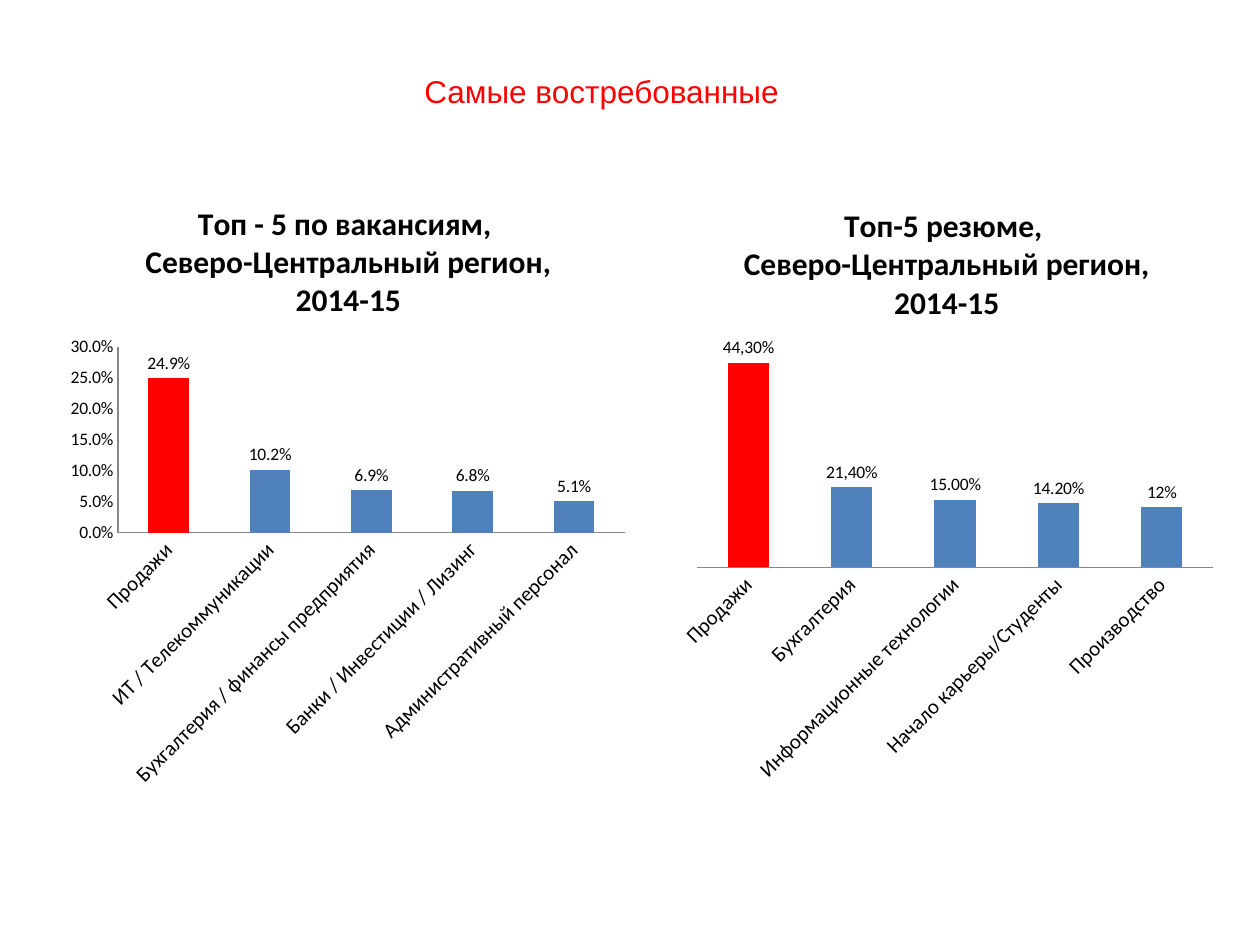
from lxml.etree import SubElement
from pptx import Presentation
from pptx.chart.data import CategoryChartData
from pptx.dml.color import RGBColor
from pptx.enum.chart import XL_CHART_TYPE, XL_LABEL_POSITION, XL_TICK_MARK
from pptx.enum.text import MSO_AUTO_SIZE
from pptx.oxml.ns import qn
from pptx.util import Inches, Pt

THEME = {
    "heading": {"name": "Arial", "size": Pt(18), "color": "FF0000"},
    "chart": {"name": "Calibri", "size": Pt(10), "color": "000000"},
    "chart_title": {"name": "Calibri", "size": Pt(18), "bold": True, "color": "000000"},
    "category": {"name": "Calibri", "size": Pt(12), "color": "000000"},
    "bar": "4F81BD",
    "leader": "FF0000",
    "axis": "868686",
}

# Frames are shares of the slide, plots are shares of their chart: left, top, width, height.
CHARTS = [
    {
        "frame": (0.048, 0.19, 0.457, 0.656),
        "plot": (0.10, 0.27, 0.88, 0.30),
        "title": "Топ - 5 по вакансиям, \nСеверо-Центральный регион, 2014-15",
        "values": {
            "Продажи": 0.249,
            "ИТ / Телекоммуникации": 0.102,
            "Бухгалтерия / финансы предприятия": 0.069,
            "Банки / Инвестиции / Лизинг": 0.068,
            "Административный персонал": 0.051,
        },
        "number_format": "0.0%",
        "maximum": 0.3,
        "show_scale": True,
        "own_labels": {},
    },
    {
        "frame": (0.531, 0.193, 0.441, 0.647),
        "plot": (0.05, 0.26, 0.93, 0.37),
        "title": "Топ-5 резюме, \nСеверо-Центральный регион, 2014-15",
        "values": {
            "Продажи": 0.453,
            "Бухгалтерия": 0.177,
            "Информационные технологии": 0.15,
            "Начало карьеры/Студенты": 0.142,
            "Производство": 0.133,
        },
        "number_format": "0.00%",
        "maximum": 0.5,
        "show_scale": False,
        "own_labels": {0: "44,30%", 1: "21,40%", 4: "12%"},
    },
]


def style_font(font, style):
    for attribute, value in style.items():
        if attribute == "color":
            font.color.rgb = RGBColor.from_string(value)
        else:
            setattr(font, attribute, value)


def place_plot(chart, shares):
    """Fix the inner plot area at the given shares of the chart."""
    plot_area = chart.plots[0]._element.getparent()
    layout = plot_area.find(qn("c:layout"))
    if layout is None:
        layout = SubElement(plot_area, qn("c:layout"))
        plot_area.insert(0, layout)
    manual = SubElement(layout, qn("c:manualLayout"))
    settings = {"layoutTarget": "inner", "xMode": "edge", "yMode": "edge"}
    settings.update(zip("xywh", shares))
    for tag, value in settings.items():
        SubElement(manual, qn(f"c:{tag}")).set("val", str(value))


presentation = Presentation()
presentation.slide_width, presentation.slide_height = Inches(10), Inches(7.5)
width, height = presentation.slide_width, presentation.slide_height
slide = presentation.slides.add_slide(presentation.slide_layouts[6])

heading = slide.shapes.add_textbox(
    int(0.327 * width), int(0.07 * height), int(0.305 * width), int(0.053 * height)
)
heading.text_frame.word_wrap = False
heading.text_frame.auto_size = MSO_AUTO_SIZE.SHAPE_TO_FIT_TEXT
heading_run = heading.text_frame.paragraphs[0].add_run()
heading_run.text = "Самые востребованные"
style_font(heading_run.font, THEME["heading"])

for content in CHARTS:
    data = CategoryChartData(number_format=content["number_format"])
    data.categories = list(content["values"])
    data.add_series("Series 1", list(content["values"].values()))
    frame = [int(share * side) for share, side in zip(content["frame"], (width, height) * 2)]
    chart = slide.shapes.add_chart(XL_CHART_TYPE.COLUMN_CLUSTERED, *frame, data).chart
    style_font(chart.font, THEME["chart"])
    chart.has_legend = False
    place_plot(chart, content["plot"])

    chart.has_title = True
    chart.chart_title.include_in_layout = False
    chart.chart_title.text_frame.text = content["title"]
    for paragraph in chart.chart_title.text_frame.paragraphs:
        for run in paragraph.runs:
            style_font(run.font, THEME["chart_title"])

    category_axis, value_axis = chart.category_axis, chart.value_axis
    for axis in (category_axis, value_axis):
        axis.major_tick_mark = axis.minor_tick_mark = XL_TICK_MARK.NONE
        axis.has_major_gridlines = False
        axis.format.line.color.rgb = RGBColor.from_string(THEME["axis"])
        axis.format.line.width = Pt(0.75)
    style_font(category_axis.tick_labels.font, THEME["category"])
    category_text = category_axis._element.find(qn("c:txPr"))
    category_text.find(qn("a:bodyPr")).set("rot", str(-45 * 60000))
    value_axis.minimum_scale, value_axis.maximum_scale = 0, content["maximum"]
    value_axis.visible = content["show_scale"]
    value_axis.tick_labels.number_format = content["number_format"]
    value_axis.tick_labels.number_format_is_linked = False

    plot = chart.plots[0]
    plot.gap_width = 150
    plot.vary_by_categories = False
    series = plot.series[0]
    for bar, color in ((series, THEME["bar"]), (series.points[0], THEME["leader"])):
        bar.format.fill.solid()
        bar.format.fill.fore_color.rgb = RGBColor.from_string(color)

    labels = series.data_labels
    labels.show_value = True
    labels.number_format = content["number_format"]
    labels.number_format_is_linked = False
    labels.position = XL_LABEL_POSITION.OUTSIDE_END
    style_font(labels.font, THEME["chart"])
    for index, text in content["own_labels"].items():
        label = series.points[index].data_label
        label.text_frame.text = text
        style_font(label.text_frame.paragraphs[0].runs[0].font, THEME["chart"])
        label.position = XL_LABEL_POSITION.OUTSIDE_END

presentation.save("out.pptx")
